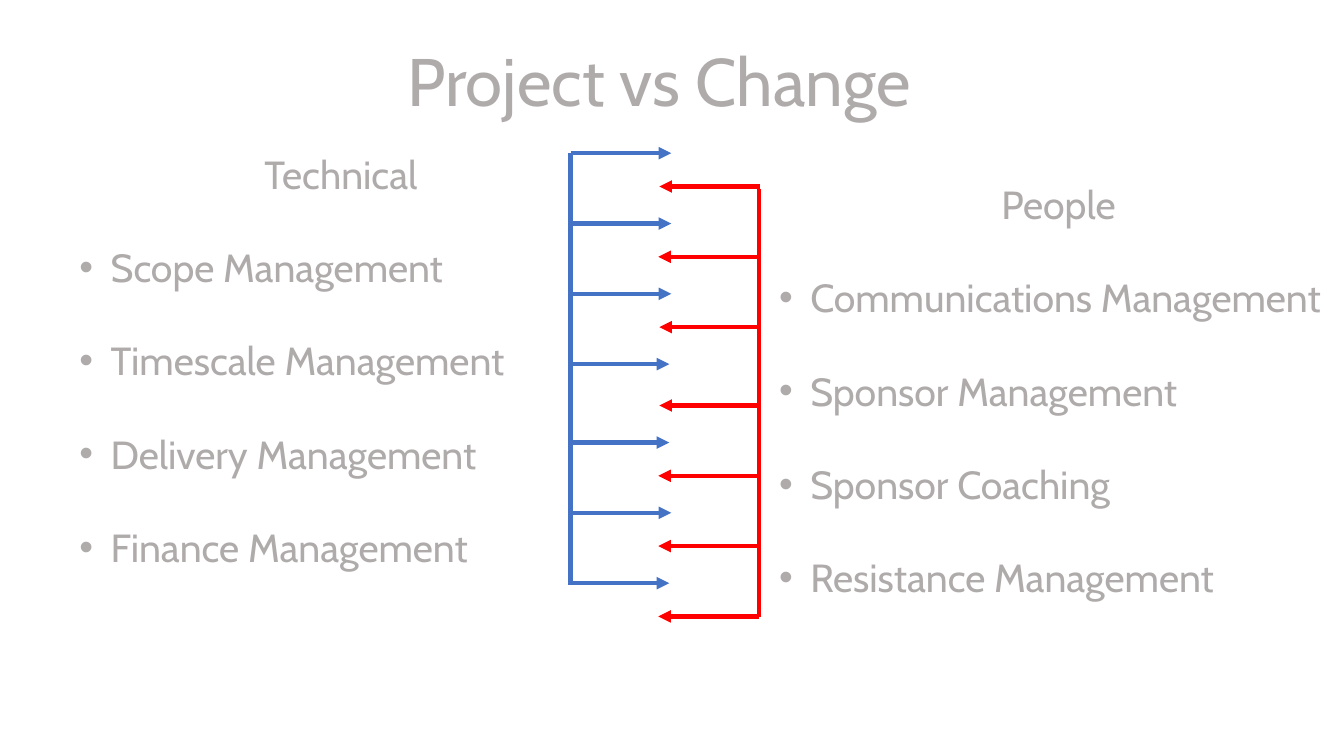
from dataclasses import dataclass

from lxml.etree import SubElement
from pptx import Presentation
from pptx.dml.color import RGBColor
from pptx.enum.shapes import MSO_CONNECTOR
from pptx.enum.text import MSO_AUTO_SIZE, PP_ALIGN
from pptx.oxml.ns import qn
from pptx.util import Inches, Pt

COLORS = {"text": "AFABAB", "technical": "4472C4", "people": "FF0000"}
FONT = "Cabin"
SLIDE_W, SLIDE_H = Inches(13.333), Inches(7.5)

# Places and lengths below are percentages of the slide's width or height.
ARROW_COUNT = 7
ARROW_LENGTH = 7.5
ARROW_STEP = 9.3
WIDE_GAP_EXTRA = 1.07
SPINE_LENGTH = 56.53


@dataclass(frozen=True)
class Box:
    left: float
    top: float
    width: float
    height: float


@dataclass(frozen=True)
class Column:
    box: Box
    heading: str
    items: tuple[str, ...]


@dataclass(frozen=True)
class Comb:
    color: str
    x: float
    spine_top: float
    first_arrow: float
    direction: int
    wide_gap_before: int
    shift: float
    shifted: tuple[int, ...]


COLUMNS = (
    Column(Box(5.17, 19.2, 41.03, 66), "Technical ",
           ("Scope Management", "Timescale Management",
            "Delivery Management", "Finance Management")),
    Column(Box(57.23, 23.2, 43.05, 72.27), "People",
           ("Communications Management", "Sponsor Management",
            "Sponsor Coaching", "Resistance Management")),
)
COMBS = (
    Comb("technical", 42.45, 20.27, 20.27, 1, 4, -0.15, (3, 4, 6)),
    Comb("people", 56.48, 25.07, 24.67, -1, 3, 0.08, (0, 2, 3)),
)


def px(share: float) -> int:
    """Horizontal percentage to EMU."""
    return round(SLIDE_W * share / 100)


def py(share: float) -> int:
    """Vertical percentage to EMU."""
    return round(SLIDE_H * share / 100)


def add_text_frame(s, box: Box):
    sp = s.shapes.add_textbox(px(box.left), py(box.top),
                              px(box.width), py(box.height))
    tf = sp.text_frame
    tf.word_wrap = True
    tf.auto_size = MSO_AUTO_SIZE.SHAPE_TO_FIT_TEXT
    return tf


def write(p, text: str, *, size: float = 28, align=PP_ALIGN.LEFT,
          before: float = 0, bullet: bool = False) -> None:
    p.alignment = align
    p.space_before = Pt(before)
    r = p.add_run()
    r.text = text
    r.font.name = FONT
    r.font.size = Pt(size)
    r.font.color.rgb = RGBColor.from_string(COLORS["text"])
    if bullet:
        indent = Inches(0.31)
        pPr = p._p.get_or_add_pPr()
        pPr.set("marL", str(indent))
        pPr.set("indent", str(-indent))
        SubElement(pPr, qn("a:buFont"), typeface="Arial")
        SubElement(pPr, qn("a:buChar"), char="•")


def add_line(shapes, x1: float, y1: float, x2: float, y2: float,
             color: str, arrow: bool = False) -> None:
    line = shapes.add_connector(MSO_CONNECTOR.STRAIGHT,
                                px(x1), py(y1), px(x2), py(y2))
    line.line.color.rgb = RGBColor.from_string(COLORS[color])
    line.line.width = Pt(3)
    if arrow:
        SubElement(line.line._get_or_add_ln(), qn("a:tailEnd"), type="triangle")
    SubElement(line._element.spPr, qn("a:effectLst"))


def add_comb(s, comb: Comb) -> None:
    """A vertical spine with a row of arrows pointing to one side."""
    shapes = s.shapes.add_group_shape().shapes
    add_line(shapes, comb.x, comb.spine_top,
             comb.x, comb.spine_top + SPINE_LENGTH, comb.color)
    for i in range(ARROW_COUNT):
        x = comb.x + (comb.shift if i in comb.shifted else 0)
        y = comb.first_arrow + i * ARROW_STEP
        if i >= comb.wide_gap_before:
            y += WIDE_GAP_EXTRA
        add_line(shapes, x, y, x + comb.direction * ARROW_LENGTH, y,
                 comb.color, arrow=True)


def add_column(s, column: Column) -> None:
    tf = add_text_frame(s, column.box)
    write(tf.paragraphs[0], column.heading, align=PP_ALIGN.CENTER)
    for item in column.items:
        write(tf.add_paragraph(), item, before=33, bullet=True)


def main() -> None:
    prs = Presentation()
    prs.slide_width, prs.slide_height = SLIDE_W, SLIDE_H
    s = prs.slides.add_slide(prs.slide_layouts[6])
    title = add_text_frame(s, Box(25.8, 4.53, 46.5, 12.13))
    write(title.paragraphs[0], "Project vs Change", size=48,
          align=PP_ALIGN.CENTER)
    for comb in COMBS:
        add_comb(s, comb)
    for column in COLUMNS:
        add_column(s, column)
    prs.save("out.pptx")


if __name__ == "__main__":
    main()
